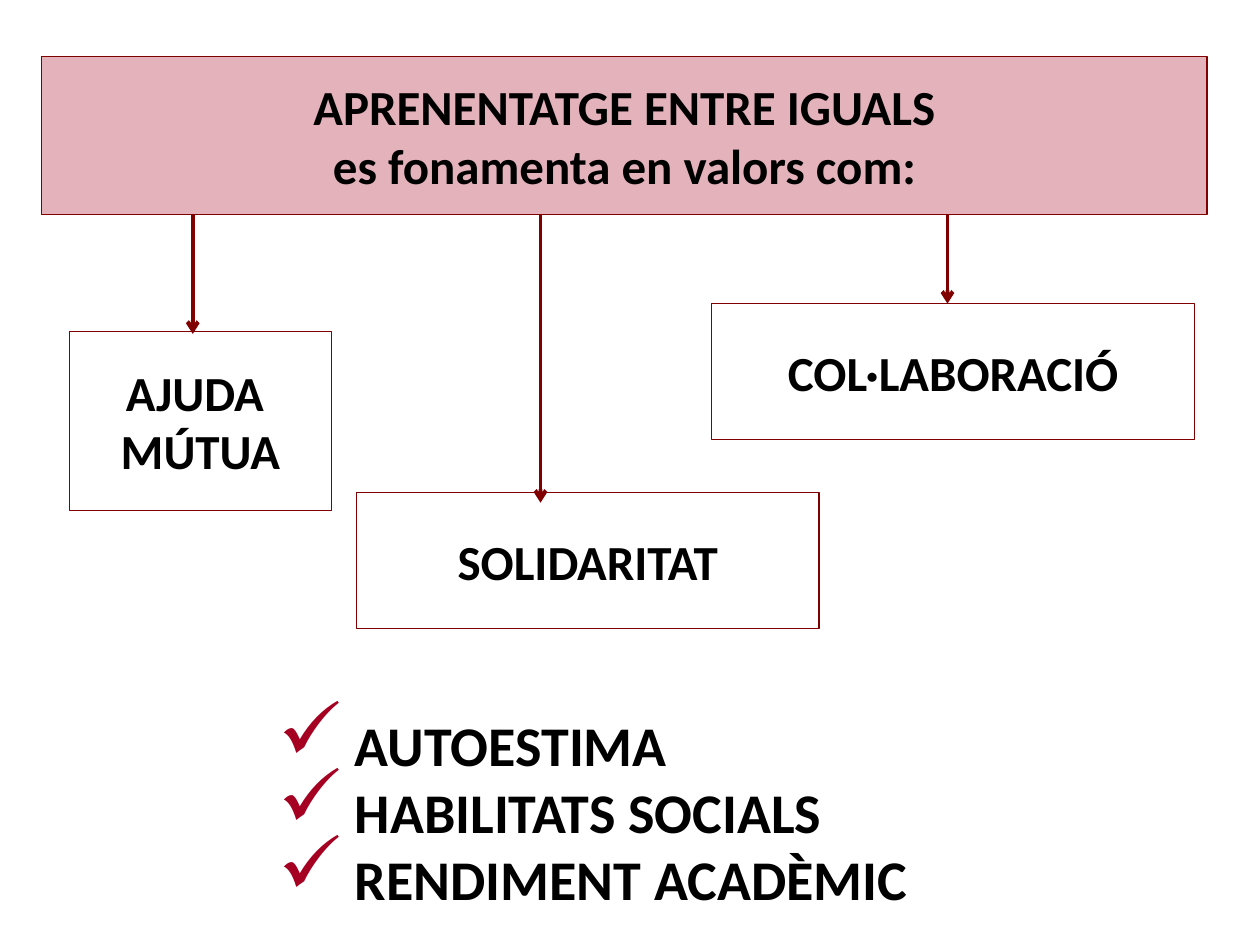
import pptx
import pptx.util
import pptx.dml.color
import pptx.enum.shapes
import pptx.enum.text
import pptx.oxml.ns
import lxml.etree
from dataclasses import dataclass

Inches = pptx.util.Inches
Pt = pptx.util.Pt
qn = pptx.oxml.ns.qn
Color = pptx.dml.color.RGBColor.from_string
Align = pptx.enum.text.PP_ALIGN
Anchor = pptx.enum.text.MSO_ANCHOR
AutoSize = pptx.enum.text.MSO_AUTO_SIZE


@dataclass(frozen=True)
class Theme:
    font: str = "Calibri"
    text: str = "000000"
    border: str = "800000"
    accent: str = "A50021"
    banner_alpha: int = 30
    body_size: int = 28
    list_size: int = 32
    border_width: float = 0.75
    arrow_width: float = 2.25
    bullet_percent: int = 145


THEME = Theme()
BANNER = {
    "text": "APRENENTATGE ENTRE IGUALS\ves fonamenta en valors com:",
    "box": (0.33, 0.45, 9.25, 1.25),
}
VALUES = [
    {"lines": ["AJUDA ", "MÚTUA"], "box": (0.55, 2.63, 2.08, 1.42), "arrow": (1.53, 2.65)},
    {"lines": ["COL·LABORACIÓ"], "box": (5.65, 2.41, 3.83, 1.08), "arrow": (7.52, 2.41)},
    {"lines": ["SOLIDARITAT"], "box": (2.83, 3.91, 3.67, 1.08), "arrow": (4.29, 3.99)},
]
BENEFITS = [" AUTOESTIMA", " HABILITATS SOCIALS", " RENDIMENT ACADÈMIC"]
BENEFITS_BOX = (1.61, 5.59, 6.77, 1.7)


def add_bullet(paragraph):
    paragraph.level = 1
    properties = paragraph._p.get_or_add_pPr()
    properties.set("marL", str(Inches(0.5)))
    properties.set("indent", "0")
    color = lxml.etree.SubElement(properties, qn("a:buClr"))
    lxml.etree.SubElement(color, qn("a:srgbClr"), val=THEME.accent)
    lxml.etree.SubElement(properties, qn("a:buSzPct"), val=str(THEME.bullet_percent * 1000))
    lxml.etree.SubElement(properties, qn("a:buChar"), char="✓")


def write_text(shape, lines, size=THEME.body_size, align=Align.CENTER,
               anchor=Anchor.MIDDLE, wrap=False, auto_size=AutoSize.NONE, bullet=False):
    frame = shape.text_frame
    frame.word_wrap = wrap
    frame.auto_size = auto_size
    frame.vertical_anchor = anchor
    for index, line in enumerate(lines):
        paragraph = frame.add_paragraph() if index else frame.paragraphs[0]
        paragraph.text = line
        if bullet:
            add_bullet(paragraph)
        paragraph.alignment = align
        paragraph.font.name = THEME.font
        paragraph.font.size = Pt(size)
        paragraph.font.bold = True
        paragraph.font.color.rgb = Color(THEME.text)


def set_border(shape, width):
    shape.line.color.rgb = Color(THEME.border)
    shape.line.width = Pt(width)


def add_value(slide, lines, box):
    shape = slide.shapes.add_shape(
        pptx.enum.shapes.MSO_SHAPE.RECTANGLE, *map(Inches, box))
    shape.shadow.inherit = False
    shape.fill.background()
    set_border(shape, THEME.border_width)
    write_text(shape, lines)


def add_arrow(slide, x, top, bottom):
    arrow = slide.shapes.add_connector(
        pptx.enum.shapes.MSO_CONNECTOR.STRAIGHT,
        Inches(x), Inches(top), Inches(x), Inches(bottom))
    set_border(arrow, THEME.arrow_width)
    lxml.etree.SubElement(arrow.line._get_or_add_ln(), qn("a:tailEnd"), type="arrow")
    lxml.etree.SubElement(arrow._element.spPr, qn("a:effectLst"))


def format_banner(title):
    title.left, title.top, title.width, title.height = map(Inches, BANNER["box"])
    title.fill.solid()
    title.fill.fore_color.rgb = Color(THEME.accent)
    color = title._element.spPr.find(qn("a:solidFill")).find(qn("a:srgbClr"))
    lxml.etree.SubElement(color, qn("a:alpha"), val=str(THEME.banner_alpha * 1000))
    set_border(title, THEME.border_width)
    write_text(title, [BANNER["text"]])


def main():
    presentation = pptx.Presentation()
    presentation.slide_width = Inches(10)
    presentation.slide_height = Inches(7.5)
    slide = presentation.slides.add_slide(presentation.slide_layouts[5])
    format_banner(slide.shapes.title)

    banner_bottom = BANNER["box"][1] + BANNER["box"][3]
    for value in VALUES:
        add_value(slide, value["lines"], value["box"])
    for value in VALUES:
        x, bottom = value["arrow"]
        add_arrow(slide, x, banner_bottom, bottom)

    benefits = slide.shapes.add_textbox(*map(Inches, BENEFITS_BOX))
    write_text(benefits, BENEFITS, size=THEME.list_size, align=Align.LEFT,
               anchor=Anchor.TOP, wrap=True, auto_size=AutoSize.SHAPE_TO_FIT_TEXT,
               bullet=True)
    presentation.save("out.pptx")


if __name__ == "__main__":
    main()
